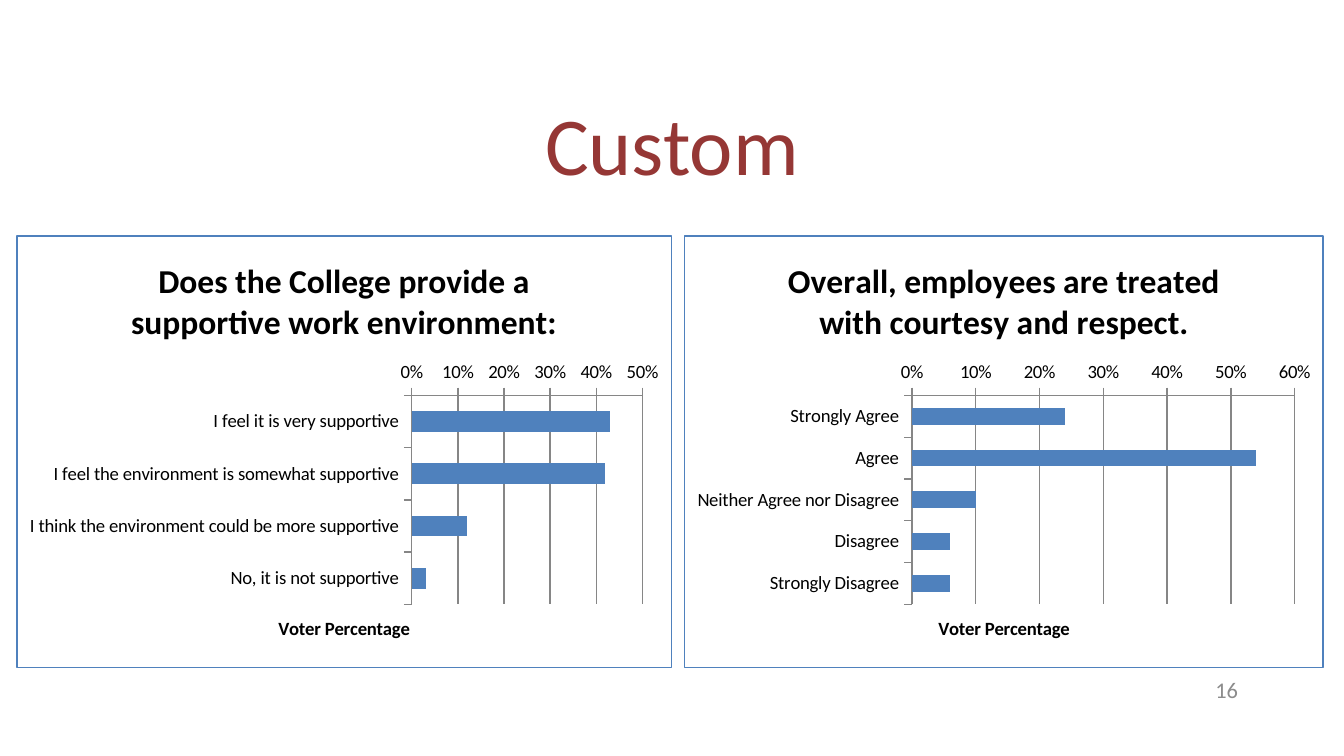
from lxml.etree import SubElement
from pptx import Presentation
from pptx.chart.data import CategoryChartData
from pptx.dml.color import RGBColor
from pptx.enum.chart import XL_CHART_TYPE, XL_TICK_LABEL_POSITION, XL_TICK_MARK
from pptx.enum.text import MSO_ANCHOR, PP_ALIGN
from pptx.oxml import parse_xml
from pptx.oxml.ns import nsdecls
from pptx.util import Inches, Pt

FONT = "Calibri"
COLORS = {
    "title": "953735",
    "text": "000000",
    "bar": "4F81BD",
    "grid": "868686",
    "number": "8C8C8C",
}
PAGE_WIDTH = 10
PAGE_HEIGHT = PAGE_WIDTH * 9 / 16
TITLE = "Custom"
PAGE_NUMBER = "16"
AXIS_TITLE = "Voter Percentage"
CHART_TOP, CHART_HEIGHT = 1.75, 3.22
CHARTS = [
    {
        "title": "Overall, employees are treated with courtesy and respect.",
        "left": 5.09,
        "width": 4.76,
        "maximum": 0.6,
        "answers": [
            ("Strongly Agree", 0.24),
            ("Agree", 0.54),
            ("Neither Agree nor Disagree", 0.1),
            ("Disagree", 0.06),
            ("Strongly Disagree", 0.06),
        ],
    },
    {
        "title": "Does the College provide a supportive work environment:",
        "left": 0.12,
        "width": 4.88,
        "maximum": 0.5,
        "answers": [
            ("I feel it is very supportive", 0.43),
            ("I feel the environment is somewhat supportive", 0.42),
            ("I think the environment could be more supportive", 0.12),
            ("No, it is not supportive", 0.03),
        ],
    },
]


def write(frame, text, size, color="text", bold=False, align=None, spacing=None):
    paragraph = frame.paragraphs[0]
    if align is not None:
        paragraph.alignment = align
    if spacing is not None:
        paragraph.line_spacing = spacing
    span = paragraph.add_run()
    span.text = text
    span.font.name = FONT
    span.font.size = Pt(size)
    span.font.bold = bold
    span.font.color.rgb = RGBColor.from_string(COLORS[color])


def place(shape, left, top, width, height):
    shape.left, shape.top = Inches(left), Inches(top)
    shape.width, shape.height = Inches(width), Inches(height)


def add_border(chart, color, points):
    """Outline the whole chart area, which has no public format object."""
    properties = parse_xml(f"<c:spPr {nsdecls('c', 'a')}><a:noFill/></c:spPr>")
    namespace = "{" + properties.nsmap["a"] + "}"
    line = SubElement(properties, namespace + "ln", w=str(Pt(points)))
    fill = SubElement(line, namespace + "solidFill")
    SubElement(fill, namespace + "srgbClr", val=color)
    chart._chartSpace.chart.addnext(properties)


def style_line(line):
    line.color.rgb = RGBColor.from_string(COLORS["grid"])
    line.width = Pt(0.75)


def add_survey_chart(page, survey):
    data = CategoryChartData(number_format="0%")
    data.categories = [answer for answer, share in survey["answers"]]
    data.add_series("Series 1", [share for answer, share in survey["answers"]])
    chart = page.shapes.add_chart(
        XL_CHART_TYPE.BAR_CLUSTERED,
        Inches(survey["left"]), Inches(CHART_TOP),
        Inches(survey["width"]), Inches(CHART_HEIGHT), data,
    ).chart
    chart.has_legend = False
    chart.font.name = FONT
    chart.font.size = Pt(10)
    chart.font.color.rgb = RGBColor.from_string(COLORS["text"])
    write(chart.chart_title.text_frame, survey["title"], 18, bold=True)
    chart.chart_title.include_in_layout = False
    add_border(chart, COLORS["bar"], 0.75)

    plot = chart.plots[0]
    plot.gap_width = 150
    plot.vary_by_categories = False
    bars = plot.series[0].format.fill
    bars.solid()
    bars.fore_color.rgb = RGBColor.from_string(COLORS["bar"])

    categories, shares = chart.category_axis, chart.value_axis
    for axis in (categories, shares):
        axis.major_tick_mark = XL_TICK_MARK.OUTSIDE
        axis.minor_tick_mark = XL_TICK_MARK.NONE
        axis.tick_label_position = XL_TICK_LABEL_POSITION.NEXT_TO_AXIS
        style_line(axis.format.line)
    categories.reverse_order = True
    categories.has_major_gridlines = False
    shares.minimum_scale, shares.maximum_scale = 0, survey["maximum"]
    shares.major_unit = 0.1
    shares.has_major_gridlines = True
    style_line(shares.major_gridlines.format.line)
    shares.tick_labels.number_format = "0%"
    shares.tick_labels.number_format_is_linked = False
    write(shares.axis_title.text_frame, AXIS_TITLE, 10, bold=True)


def main():
    deck = Presentation()
    deck.slide_width, deck.slide_height = Inches(PAGE_WIDTH), Inches(PAGE_HEIGHT)
    page = deck.slides.add_slide(deck.slide_layouts[5])

    title = page.shapes.title
    place(title, 0.69, 0.56, 8.62, 1.09)
    title.text_frame.vertical_anchor = MSO_ANCHOR.MIDDLE
    write(title.text_frame, TITLE, 44, color="title",
          align=PP_ALIGN.CENTER, spacing=0.9)

    for survey in CHARTS:
        add_survey_chart(page, survey)

    number = page.shapes.add_textbox(0, 0, 0, 0)
    place(number, 7.06, 4.98, 2.25, 0.3)
    number.text_frame.word_wrap = True
    number.text_frame.vertical_anchor = MSO_ANCHOR.MIDDLE
    write(number.text_frame, PAGE_NUMBER, 12, color="number", align=PP_ALIGN.RIGHT)

    deck.save("out.pptx")


if __name__ == "__main__":
    main()
